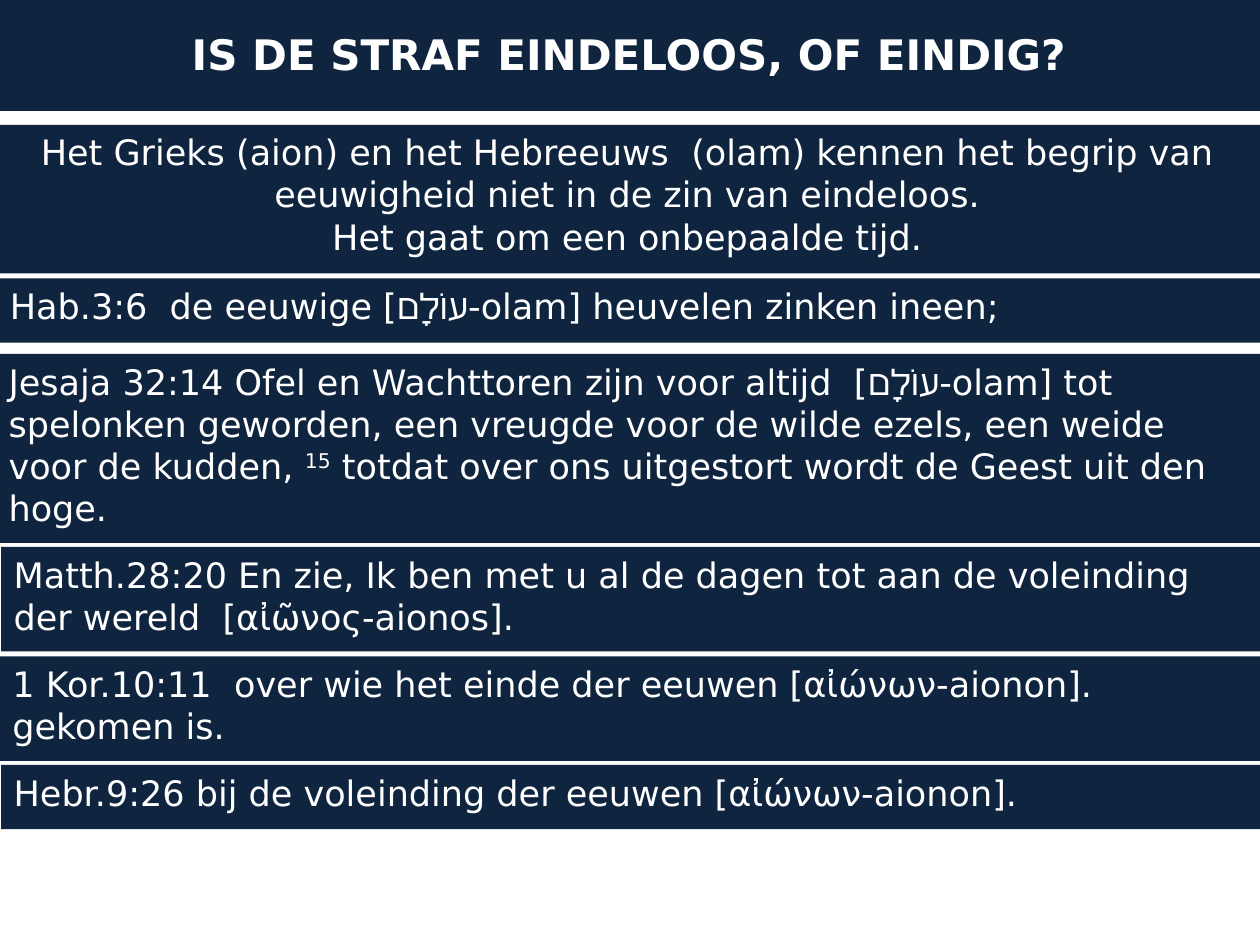
from dataclasses import dataclass

from pptx import Presentation
from pptx.dml.color import RGBColor as Rgb
from pptx.enum.shapes import MSO_SHAPE as Shape
from pptx.enum.text import MSO_ANCHOR as Anchor, MSO_AUTO_SIZE as Auto, PP_ALIGN as Align
from pptx.util import Inches, Pt


@dataclass(frozen=True)
class Theme:
    navy: Rgb = Rgb(0x0F, 0x24, 0x3E)
    white: Rgb = Rgb(0xFF, 0xFF, 0xFF)
    face: str = "DejaVu Sans"
    body: int = 20
    title: int = 24
    raised: str = "30000"


@dataclass(frozen=True)
class Verse:
    num: str


@dataclass(frozen=True)
class Band:
    left: float
    top: float
    height: float
    lines: tuple[tuple[str | Verse, ...], ...]
    align: Align = Align.LEFT
    head: bool = False


THEME = Theme()
WIDTH = 10.04
BANDS = (
    Band(-0.04, 0.99, 1.18, (
        ("Het Grieks (aion) en het Hebreeuws  (olam) kennen het begrip van "
         "eeuwigheid niet in de zin van eindeloos.",),
        ("Het gaat om een onbepaalde tijd.",),
    ), Align.CENTER),
    Band(-0.03, -0.03, 0.91, (("IS DE STRAF EINDELOOS, OF EINDIG?",),), Align.CENTER, True),
    Band(-0.02, 2.21, 0.51, (("Hab.3:6  de eeuwige [עוֹלָם-olam] heuvelen zinken ineen;",),)),
    Band(-0.03, 2.81, 1.5, ((
        "Jesaja 32:14 Ofel en Wachttoren zijn voor altijd  [עוֹלָם-olam] tot spelonken "
        "geworden, een vreugde voor de wilde ezels, een weide voor de kudden, ",
        Verse("15"),
        " totdat over ons uitgestort wordt de Geest uit den hoge.",
    ),)),
    Band(0.01, 4.34, 0.83, (
        ("Matth.28:20 En zie, Ik ben met u al de dagen tot aan de voleinding "
         "der wereld  [αἰῶνος-aionos].",),
    )),
    Band(0, 5.21, 0.83, (
        ("1 Kor.10:11  over wie het einde der eeuwen [αἰώνων-aionon].",),
        ("gekomen is.",),
    )),
    Band(0.01, 6.07, 0.51, (("Hebr.9:26 bij de voleinding der eeuwen [αἰώνων-aionon].",),)),
)


def write(para, line: tuple[str | Verse, ...], band: Band) -> None:
    """Fill one paragraph, raising verse numbers."""
    para.alignment = band.align
    font = para.font
    font.name, font.bold = THEME.face, band.head
    font.size = Pt(THEME.title if band.head else THEME.body)
    font.color.rgb = THEME.white
    for part in line:
        run = para.add_run()
        if isinstance(part, Verse):
            run.text = part.num
            run._r.get_or_add_rPr().set("baseline", THEME.raised)
        else:
            run.text = part


def draw(slide, band: Band) -> None:
    """Draw one navy band with its text."""
    box = slide.shapes.add_shape(
        Shape.RECTANGLE, Inches(band.left), Inches(band.top), Inches(WIDTH), Inches(band.height)
    )
    box.shadow.inherit = False
    box.fill.solid()
    box.fill.fore_color.rgb = THEME.navy
    box.line.fill.background()
    frame = box.text_frame
    frame.word_wrap = True
    frame.auto_size = Auto.SHAPE_TO_FIT_TEXT
    frame.vertical_anchor = Anchor.MIDDLE if band.head else Anchor.TOP
    for i, line in enumerate(band.lines):
        write(frame.add_paragraph() if i else frame.paragraphs[0], line, band)


def main() -> None:
    """Build and save the slide."""
    deck = Presentation()
    deck.slide_width, deck.slide_height = Inches(10), Inches(7.5)
    slide = deck.slides.add_slide(deck.slide_layouts[6])
    for band in BANDS:
        draw(slide, band)
    deck.save("out.pptx")


if __name__ == "__main__":
    main()
